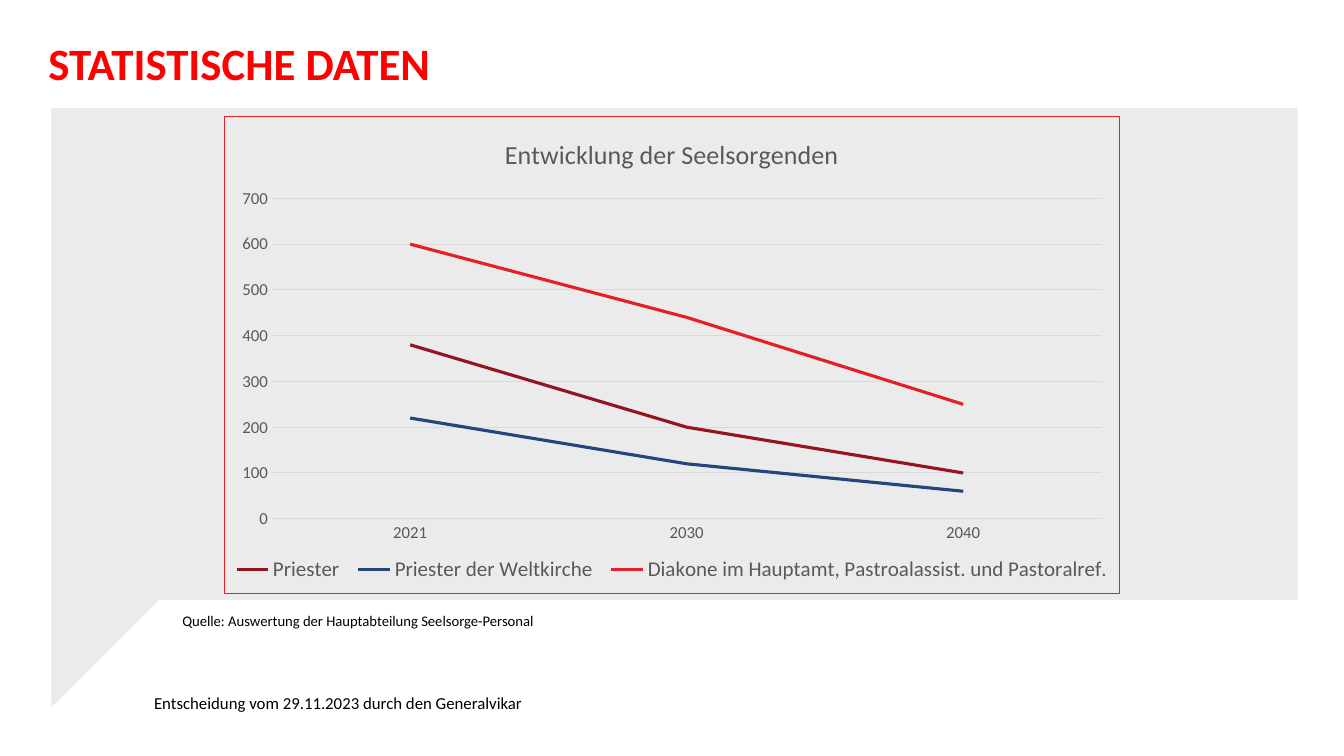
from lxml import etree
from pptx import Presentation
from pptx.chart.data import CategoryChartData
from pptx.dml.color import RGBColor
from pptx.enum.chart import XL_CHART_TYPE as Chart, XL_LEGEND_POSITION as Legend
from pptx.enum.chart import XL_TICK_MARK as Tick
from pptx.enum.text import MSO_ANCHOR as Anchor
from pptx.oxml import parse_xml
from pptx.oxml.ns import nsdecls, qn
from pptx.util import Inches, Pt

W, H = 13.33, 7.5
FONT = "Calibri"
RED, GREY, GRID = "E51F28", "595959", "D9D9D9"
YEARS = ("2021", "2030", "2040")
SERIES = (
    ("Priester", (380, 200, 100), "93151F"),
    ("Priester der Weltkirche", (220, 120, 60), "24467A"),
    ("Diakone im Hauptamt, Pastroalassist. und Pastoralref.", (600, 440, 250), RED),
)
# Shares of the chart's size
EDGE = {"xMode": "edge", "yMode": "edge"}
PLOT = {"layoutTarget": "inner", **EDGE, "x": 0.053, "y": 0.172, "w": 0.927, "h": 0.672}
LEGEND = {**EDGE, "x": 0, "y": 0.91, "w": 1, "h": 0.08}


def color(value):
    return RGBColor.from_string(value)


def set_font(font, size, value, bold=False):
    formats = {"name": FONT, "size": Pt(size), "bold": bold}
    for key, val in formats.items():
        setattr(font, key, val)
    font.color.rgb = color(value)


def set_line(line, value, width):
    line.color.rgb = color(value)
    line.width = Pt(width)


def add_text(slide, box, text, size, value="000000", bold=False, spacing=None, **frame):
    tf = slide.shapes.add_textbox(*map(Inches, box)).text_frame
    tf.word_wrap = True
    for key, val in frame.items():
        setattr(tf, key, val)
    p = tf.paragraphs[0]
    p.line_spacing = spacing
    r = p.add_run()
    r.text = text
    set_font(r.font, size, value, bold)


def add_panel(slide, points, value):
    start, *rest = [(Inches(x), Inches(y)) for x, y in points]
    builder = slide.shapes.build_freeform(*start)
    builder.add_line_segments(rest, close=True)
    sp = builder.convert_to_shape()
    sp.shadow.inherit = False
    sp.fill.solid()
    sp.fill.fore_color.rgb = color(value)
    sp.line.fill.background()


def set_layout(parent, index, settings):
    for old in parent.findall(qn("c:layout")):
        parent.remove(old)
    layout = parse_xml(f'<c:layout {nsdecls("c")}><c:manualLayout/></c:layout>')
    for key, val in settings.items():
        etree.SubElement(layout[0], qn("c:" + key)).set("val", str(val))
    parent.insert(index, layout)


def frame_chart(chart):
    # Chart border, fixed plot area and one-row legend
    space = chart.element
    space.find(qn("c:chart")).addnext(parse_xml(
        f'<c:spPr {nsdecls("c", "a")}><a:noFill/><a:ln w="{Pt(0.75)}"><a:solidFill>'
        f'<a:srgbClr val="{RED}"/></a:solidFill></a:ln></c:spPr>'))
    set_layout(space.find(".//" + qn("c:plotArea")), 0, PLOT)
    set_layout(space.find(".//" + qn("c:legend")), 1, LEGEND)


def add_line_chart(slide, box, title):
    data = CategoryChartData()
    data.categories = YEARS
    for name, values, _ in SERIES:
        data.add_series(name, values)
    chart = slide.shapes.add_chart(Chart.LINE, *map(Inches, box), data).chart
    set_font(chart.font, 10, "000000")

    # Title and legend
    chart.has_title = True
    p = chart.chart_title.text_frame.paragraphs[0]
    r = p.add_run()
    r.text = title
    set_font(r.font, 18.6, GREY)
    chart.chart_title.include_in_layout = False
    chart.has_legend = True
    chart.legend.position = Legend.BOTTOM
    chart.legend.include_in_layout = False
    set_font(chart.legend.font, 15, GREY)

    # Axes
    for axis in (chart.category_axis, chart.value_axis):
        axis.major_tick_mark = axis.minor_tick_mark = Tick.NONE
        set_font(axis.tick_labels.font, 12, GREY)
    set_line(chart.category_axis.format.line, GRID, 0.75)
    values = chart.value_axis
    for key, val in {"minimum_scale": 0, "maximum_scale": 700, "major_unit": 100}.items():
        setattr(values, key, val)
    values.format.line.fill.background()
    set_line(values.major_gridlines.format.line, GRID, 0.75)

    # Series
    chart.plots[0].vary_by_categories = False
    for s, (_, _, value) in zip(chart.plots[0].series, SERIES):
        s.smooth = False
        set_line(s.format.line, value, 2.25)
    frame_chart(chart)


def main():
    prs = Presentation()
    prs.slide_width, prs.slide_height = Inches(W), Inches(H)
    slide = prs.slides.add_slide(prs.slide_layouts[6])

    # Footer and speech-bubble panel
    add_text(slide, (1.43, 6.82, 0.62 * W, 0.04 * H),
             "Entscheidung vom 29.11.2023 durch den Generalvikar", 12,
             vertical_anchor=Anchor.MIDDLE, margin_top=0, margin_bottom=0)
    left, top, right, bottom = 0.51, 1.07, 12.87, 5.95
    tail = 1.07
    add_panel(slide, ((left, top), (right, top), (right, bottom),
                      (left + tail, bottom), (left, bottom + tail)), "EBEBEB")

    # Heading, chart and source
    add_text(slide, (0.48, 0.41, 0.93 * W, 0.09 * H), "STATISTISCHE DATEN", 32, "FF0000",
             bold=True, spacing=0.9, margin_left=0, margin_right=0, margin_top=0,
             margin_bottom=0)
    add_line_chart(slide, (W / 6, 1.15, W * 2 / 3, 4.74), "Entwicklung der Seelsorgenden")
    add_text(slide, (1.71, 6.02, 0.66 * W, 0.28),
             "Quelle: Auswertung der Hauptabteilung Seelsorge-Personal", 10.5)
    prs.save("out.pptx")


if __name__ == "__main__":
    main()
